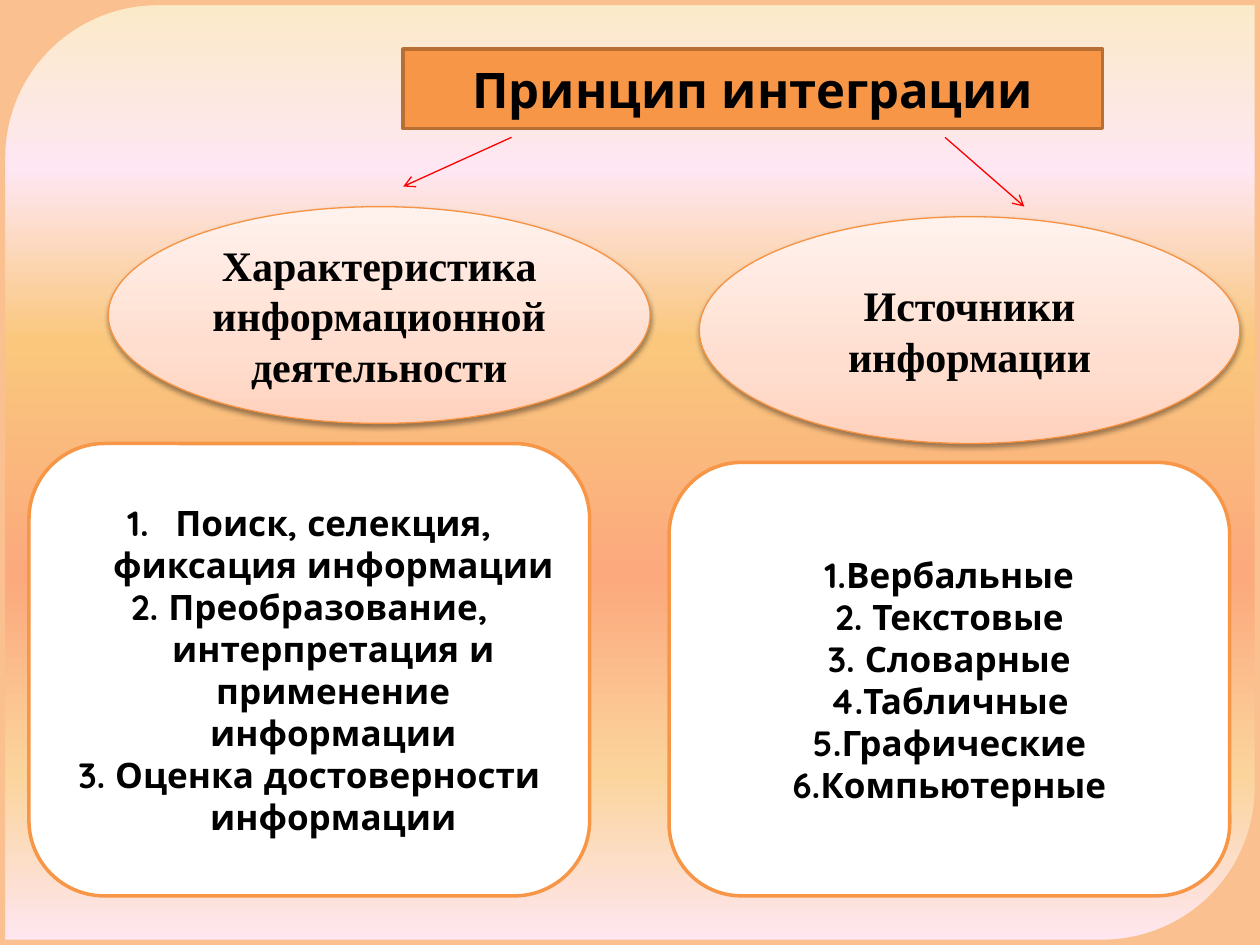
from dataclasses import dataclass

from lxml import etree
from pptx import Presentation
from pptx.dml.color import RGBColor
from pptx.enum.shapes import MSO_CONNECTOR, MSO_SHAPE
from pptx.enum.text import MSO_ANCHOR, MSO_AUTO_SIZE, PP_ALIGN
from pptx.oxml.ns import qn
from pptx.util import Inches, Pt

STRAIGHT = MSO_CONNECTOR.STRAIGHT
ELLIPSE = MSO_SHAPE.OVAL
ROUNDED = MSO_SHAPE.ROUNDED_RECTANGLE
DIAGONAL = MSO_SHAPE.ROUND_2_DIAG_RECTANGLE
MIDDLE = MSO_ANCHOR.MIDDLE
NO_FIT = MSO_AUTO_SIZE.NONE
CENTER = PP_ALIGN.CENTER
TITLE_ONLY = 5


@dataclass(frozen=True)
class Theme:
    border: str = "FAC090"
    accent: str = "F79646"
    accent_dark: str = "B76F34"
    oval_line: str = "F69240"
    arrow: str = "FF0000"
    card: str = "FFFFFF"
    text: str = "000000"
    frame_stops: tuple = ((0, "FBEAC7"), (18, "FEE7F2"), (36, "FAC77D"),
                          (61, "FBA97D"), (82, "FBD49C"), (100, "FEE7F2"))
    oval_stops: tuple = ((0, "FFD2BD"), (35, "FFDED0"), (100, "FFF2ED"))
    heading_font: str = "Quicksand"
    oval_font: str = "Times New Roman"
    title_size: int = 28
    oval_size: int = 24
    card_size: int = 20


THEME = Theme()

ARROWS = [((4.06, 1.09), (3.2, 1.48)), ((7.5, 1.09), (8.13, 1.64))]
TOPICS = [
    ((0.86, 1.64, 4.3, 1.72), "Характеристика информационной деятельности"),
    ((5.55, 1.72, 4.29, 1.8), "Источники информации"),
]
ACTIVITIES = [
    "Поиск, селекция, фиксация информации",
    "2. Преобразование, интерпретация и применение информации",
    "3. Оценка достоверности информации",
]
SOURCES = ["1.Вербальные", "2. Текстовые", "3. Словарные",
           "4.Табличные", "5.Графические", "6.Компьютерные"]


def rgb(color):
    return RGBColor.from_string(color)


def add_child(parent, tag, **attributes):
    child = etree.SubElement(parent, qn(tag))
    for name, value in attributes.items():
        child.set(name, str(value))
    return child


def set_line(shape, color, width):
    shape.line.color.rgb = rgb(color)
    shape.line.width = Pt(width)


def set_solid(shape, color):
    shape.fill.solid()
    shape.fill.fore_color.rgb = rgb(color)


def set_gradient(shape, stops, angle):
    """Fill with (percent, colour) stops; the angle runs counter-clockwise."""
    shape.fill.gradient()
    shape.fill.gradient_angle = angle
    stop_list = shape._element.spPr.find(".//" + qn("a:gsLst"))
    for stop in list(stop_list):
        stop_list.remove(stop)
    for percent, color in stops:
        stop = add_child(stop_list, "a:gs", pos=percent * 1000)
        add_child(stop, "a:srgbClr", val=color)


def add_soft_shadow(shape):
    effects = shape._element.spPr.find(qn("a:effectLst"))
    shadow = add_child(effects, "a:outerShdw", blurRad=Pt(3.1), dist=Pt(1.6),
                       dir=90 * 60000, rotWithShape=0)
    color = add_child(shadow, "a:srgbClr", val="000000")
    add_child(color, "a:alpha", val=38000)


def add_outline_shape(slide, kind, box, line_color, line_width):
    shape = slide.shapes.add_shape(kind, *map(Inches, box))
    shape.shadow.inherit = False
    set_line(shape, line_color, line_width)
    return shape


def write_text(shape, lines, font, size, hanging=0, auto_number=False):
    """Write centred bold lines; auto_number numbers the first of them."""
    frame = shape.text_frame
    for name, value in {"word_wrap": True, "auto_size": NO_FIT,
                        "vertical_anchor": MIDDLE}.items():
        setattr(frame, name, value)
    for index, line in enumerate(lines):
        paragraph = frame.add_paragraph() if index else frame.paragraphs[0]
        paragraph.alignment = CENTER
        if hanging:
            properties = paragraph._p.get_or_add_pPr()
            properties.set("marL", str(Inches(hanging)))
            properties.set("indent", str(-Inches(hanging)))
            if auto_number and index == 0:
                add_child(properties, "a:buFont", typeface="+mj-lt")
                add_child(properties, "a:buAutoNum", type="arabicPeriod")
        run = paragraph.add_run()
        run.text = line
        for name, value in {"name": font, "size": Pt(size), "bold": True}.items():
            setattr(run.font, name, value)
        run.font.color.rgb = rgb(THEME.text)


def add_frame(slide, width, height):
    frame = add_outline_shape(slide, DIAGONAL, (0, 0, width, height), THEME.border, 6)
    set_gradient(frame, THEME.frame_stops, 270)


def place_title(slide, box, text):
    title = slide.shapes.title
    slide.shapes._spTree.append(title._element)  # in front of the frame
    for name, value in zip(("left", "top", "width", "height"), box):
        setattr(title, name, Inches(value))
    outline = add_child(title._element.spPr, "a:prstGeom", prst="roundRect")
    add_child(outline, "a:avLst")
    set_solid(title, THEME.accent)
    set_line(title, THEME.accent_dark, 2)
    write_text(title, [text], THEME.heading_font, THEME.title_size)


def add_arrow(slide, start, end):
    arrow = slide.shapes.add_connector(STRAIGHT, *map(Inches, start + end))
    set_line(arrow, THEME.arrow, 0.75)
    add_child(arrow.line._get_or_add_ln(), "a:tailEnd", type="arrow")
    add_child(arrow._element.spPr, "a:effectLst")


def add_topic(slide, box, text):
    topic = add_outline_shape(slide, ELLIPSE, box, THEME.oval_line, 0.75)
    set_gradient(topic, THEME.oval_stops, 90)
    add_soft_shadow(topic)
    write_text(topic, [text], THEME.oval_font, THEME.oval_size)


def add_card(slide, box, lines, auto_number=False):
    card = add_outline_shape(slide, ROUNDED, box, THEME.accent, 2)
    set_solid(card, THEME.card)
    write_text(card, lines, THEME.heading_font, THEME.card_size, 0.38, auto_number)


def main():
    deck = Presentation()
    deck.slide_width, deck.slide_height = Inches(10), Inches(7.5)
    slide = deck.slides.add_slide(deck.slide_layouts[TITLE_ONLY])
    set_solid(slide.background, THEME.border)

    add_frame(slide, 10, 7.5)
    place_title(slide, (3.2, 0.39, 5.55, 0.63), "Принцип интеграции")
    for start, end in ARROWS:
        add_arrow(slide, start, end)
    for box, text in TOPICS:
        add_topic(slide, box, text)
    add_card(slide, (0.23, 3.52, 4.45, 3.59), ACTIVITIES, auto_number=True)
    add_card(slide, (5.31, 3.67, 4.45, 3.44), SOURCES)

    deck.save("out.pptx")


if __name__ == "__main__":
    main()
